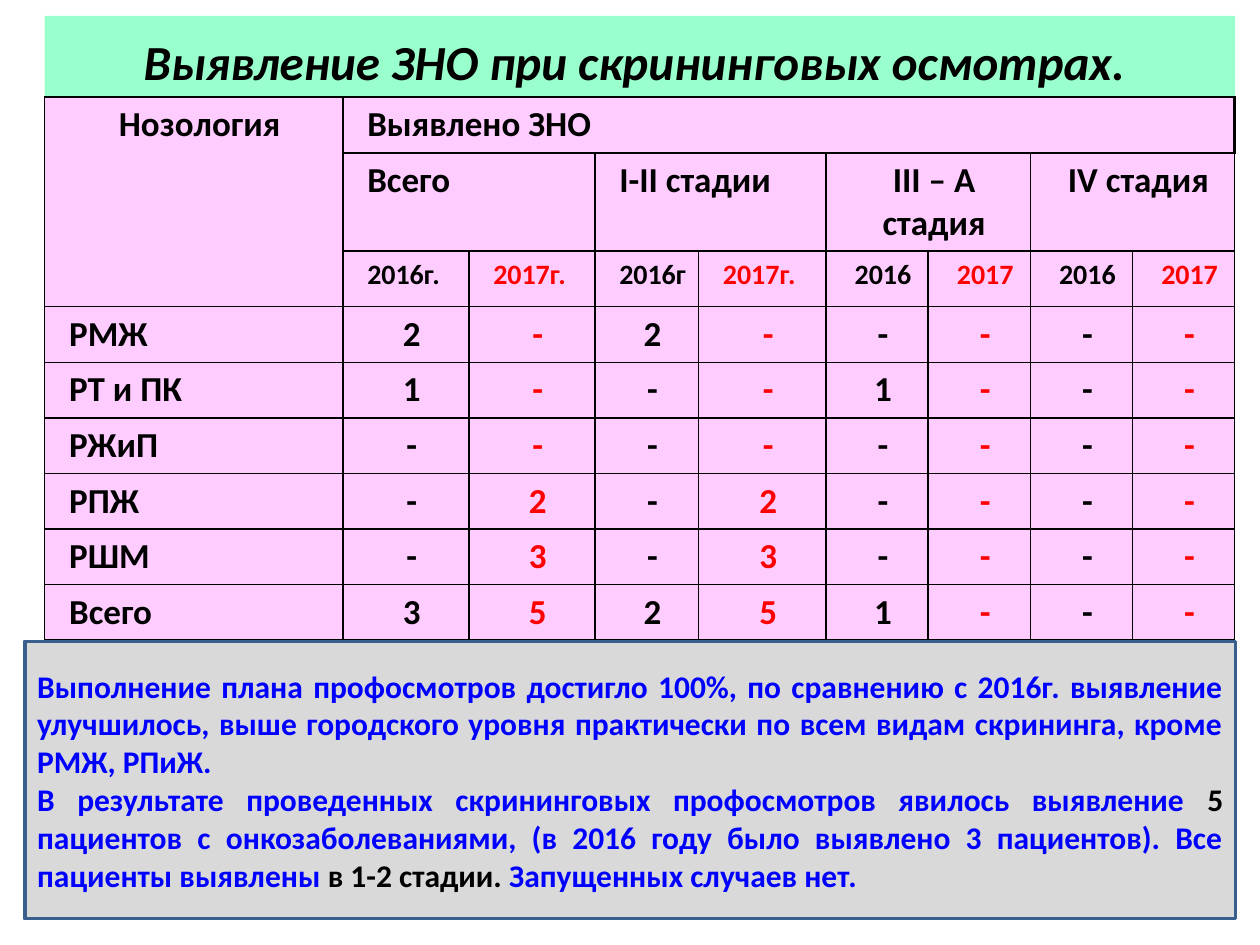
from lxml.etree import SubElement
from pptx import Presentation
from pptx.dml.color import RGBColor
from pptx.enum.shapes import MSO_SHAPE
from pptx.enum.text import MSO_ANCHOR, PP_ALIGN
from pptx.oxml.ns import qn
from pptx.util import Cm, Pt

BLACK = RGBColor(0x00, 0x00, 0x00)
RED = RGBColor(0xFF, 0x00, 0x00)
BLUE = RGBColor(0x00, 0x00, 0xFF)
MINT = RGBColor(0x99, 0xFF, 0xCC)
PINK = RGBColor(0xFF, 0xCC, 0xFF)
GREY = RGBColor(0xD9, 0xD9, 0xD9)
STEEL = RGBColor(0x3A, 0x5F, 0x8C)

LEFT, CENTER, JUSTIFY = PP_ALIGN.LEFT, PP_ALIGN.CENTER, PP_ALIGN.JUSTIFY


def style_run(span, size, color):
    span.font.name = "Calibri"
    span.font.size = Pt(size)
    span.font.bold = True
    span.font.color.rgb = color


def add_panel(page, left, top, width, height, fill):
    box = page.shapes.add_shape(
        MSO_SHAPE.RECTANGLE, Cm(left), Cm(top), Cm(width), Cm(height))
    box.shadow.inherit = False
    box.fill.solid()
    box.fill.fore_color.rgb = fill
    box.text_frame.word_wrap = True
    box.text_frame.vertical_anchor = MSO_ANCHOR.MIDDLE
    return box


deck = Presentation()
deck.slide_width, deck.slide_height = Cm(25.4), Cm(19.05)
page = deck.slides.add_slide(deck.slide_layouts[6])

# Title band
title = add_panel(page, 0.9, 0.32, 24, 1.8, MINT)
title.line.fill.background()
para = title.text_frame.paragraphs[0]
para.text = "Выявление ЗНО при скрининговых осмотрах. "
para.alignment = CENTER
style_run(para.runs[0], 28, BLACK)
para.runs[0].font.italic = True

# Table contents: merged cells are left empty
rows = [
    ["Нозология", "Выявлено ЗНО"] + [""] * 7,
    ["", "Всего", "", "I-II стадии", "", "III – А стадия", "", "IV стадия", ""],
    ["", "2016г.", "2017г.", "2016г", "2017г.", "2016", "2017", "2016", "2017"],
    ["РМЖ", "2", "-", "2", "-", "-", "-", "-", "-"],
    ["РТ и ПК", "1", "-", "-", "-", "1", "-", "-", "-"],
    ["РЖиП", "-", "-", "-", "-", "-", "-", "-", "-"],
    ["РПЖ", "-", "2", "-", "2", "-", "-", "-", "-"],
    ["РШМ", "-", "3", "-", "3", "-", "-", "-", "-"],
    ["Всего", "3", "5", "2", "5", "1", "-", "-", "-"],
]
column_widths = [6.01, 2.54, 2.54, 2.09, 2.57] + [2.06] * 4
row_heights = [1.12, 1.98] + [1.12] * 7
YEAR_ROW = 2

table = page.shapes.add_table(
    len(rows), len(column_widths), Cm(0.9), Cm(1.96),
    Cm(sum(column_widths)), Cm(sum(row_heights))).table
for column, width in zip(table.columns, column_widths):
    column.width = Cm(width)
for row, height in zip(table.rows, row_heights):
    row.height = Cm(height)

# Merged headings
table.cell(0, 0).merge(table.cell(2, 0))
table.cell(0, 1).merge(table.cell(0, 8))
for first in range(1, 9, 2):
    table.cell(1, first).merge(table.cell(1, first + 1))

for row_index, texts in enumerate(rows):
    for column_index, text in enumerate(texts):
        cell = table.cell(row_index, column_index)

        # Borders come before the fill; the top heading has a thick right edge
        properties = cell._tc.get_or_add_tcPr()
        for side in ("L", "R", "T", "B"):
            thick = side == "R" and row_index == 0 and column_index > 0
            border = SubElement(properties, qn(f"a:ln{side}"),
                                w=str(Pt(2.25 if thick else 1)))
            paint = SubElement(border, qn("a:solidFill"))
            SubElement(paint, qn("a:srgbClr"), val=str(BLACK))
        cell.fill.solid()
        cell.fill.fore_color.rgb = PINK

        if not text:
            continue
        para = cell.text_frame.paragraphs[0]
        para.text = text
        para._p.get_or_add_pPr().set("marL", str(Cm(0.24)))
        if column_index == 0:
            para.alignment = JUSTIFY if row_index > YEAR_ROW else CENTER
        else:
            centred = row_index > YEAR_ROW or column_index > 4
            para.alignment = CENTER if centred else LEFT
        is_2017 = (row_index >= YEAR_ROW and column_index > 0
                   and column_index % 2 == 0)
        style_run(para.runs[0], 16 if row_index == YEAR_ROW else 20,
                  RED if is_2017 else BLACK)

# Conclusion panel
conclusion = add_panel(page, 0.5, 12.93, 24.41, 5.59, GREY)
conclusion.line.color.rgb = STEEL
conclusion.line.width = Pt(2)
statements = [
    [("Выполнение плана профосмотров достигло 100%, по сравнению с 2016г. "
      "выявление улучшилось, выше городского уровня практически по всем видам "
      "скрининга, кроме РМЖ, РПиЖ.", BLUE)],
    [("В результате проведенных скрининговых профосмотров явилось выявление ", BLUE),
     ("5 ", BLACK),
     ("пациентов с онкозаболеваниями, (в 2016 году было выявлено 3 пациентов). "
      "Все пациенты выявлены ", BLUE),
     ("в 1-2 стадии. ", BLACK),
     ("Запущенных случаев нет.", BLUE)],
]
frame = conclusion.text_frame
for index, statement in enumerate(statements):
    para = frame.add_paragraph() if index else frame.paragraphs[0]
    para.alignment = JUSTIFY
    for text, color in statement:
        span = para.add_run()
        span.text = text
        style_run(span, 18, color)

deck.save("out.pptx")
